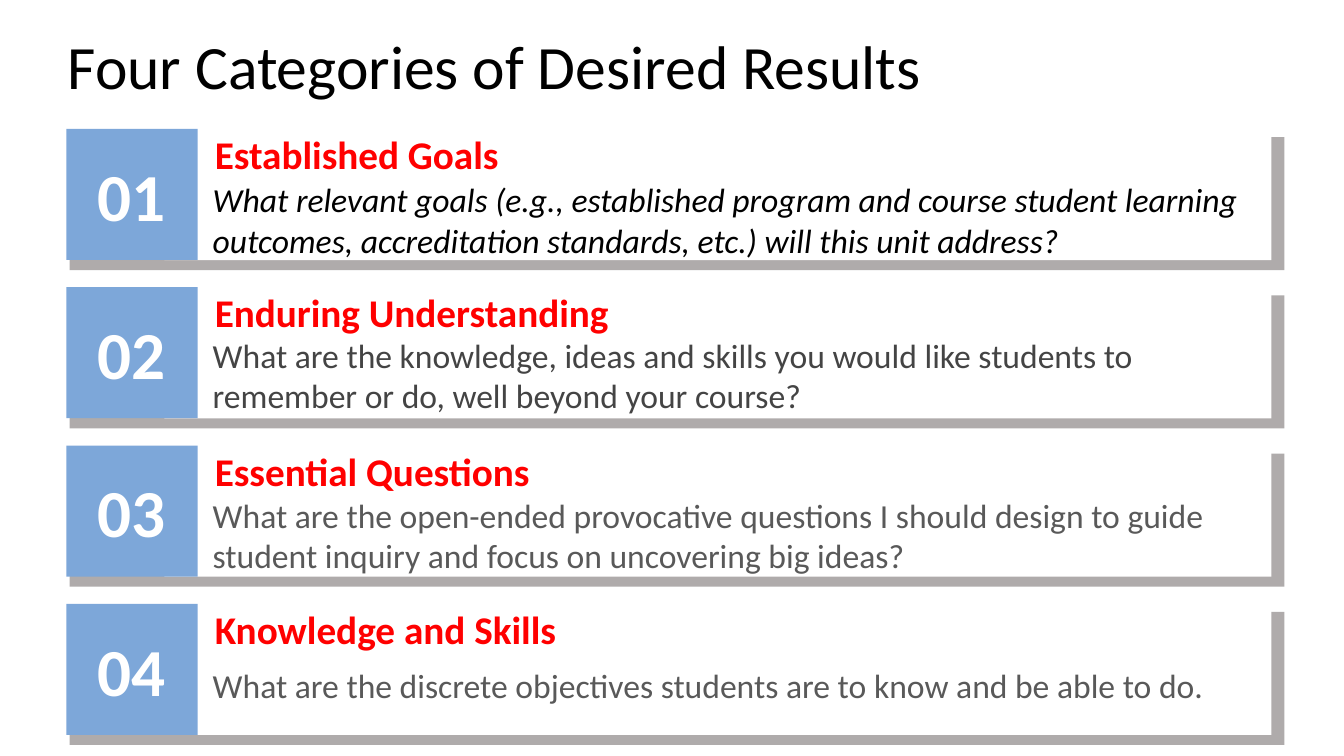
from pptx import Presentation
from pptx.dml.color import RGBColor
from pptx.enum.shapes import MSO_SHAPE
from pptx.enum.text import MSO_ANCHOR, PP_ALIGN
from pptx.util import Inches, Pt

RECTANGLE = MSO_SHAPE.RECTANGLE
TOP, MIDDLE, BOTTOM = MSO_ANCHOR.TOP, MSO_ANCHOR.MIDDLE, MSO_ANCHOR.BOTTOM
LEFT, CENTER = PP_ALIGN.LEFT, PP_ALIGN.CENTER

BLACK = RGBColor(0x00, 0x00, 0x00)
WHITE = RGBColor(0xFF, 0xFF, 0xFF)
RED = RGBColor(0xFF, 0x00, 0x00)
BLUE = RGBColor(0x7D, 0xA7, 0xD9)
SHADE = RGBColor(0xAF, 0xAB, 0xAB)
DARK_GRAY = RGBColor(0x44, 0x44, 0x44)
GRAY = RGBColor(0x59, 0x59, 0x59)

FONT = "Calibri"
CARD_LEFT, CARD_TOP, CARD_PITCH = 0.66, 1.28, 1.57
NUMBER_SIZE = 1.3

CATEGORIES = [
    ("Established Goals",
     "What relevant goals (e.g., established program and course student learning "
     "outcomes, accreditation standards, etc.) will this unit address?",
     0.45, BLACK, True),
    ("Enduring Understanding",
     "What are the knowledge, ideas and skills you would like students to "
     "remember or do, well beyond your course?",
     0.42, DARK_GRAY, False),
    ("Essential Questions",
     "What are the open-ended provocative questions I should design to guide "
     "student inquiry and focus on uncovering big ideas?",
     0.44, GRAY, False),
    ("Knowledge and Skills",
     "What are the discrete objectives students are to know and be able to do.",
     0.56, GRAY, False),
]


def write_text(shape, text, size, color, bold=False, italic=False,
               alignment=LEFT, anchor=TOP, side_margin=0.1):
    frame = shape.text_frame
    frame.word_wrap = True
    frame.vertical_anchor = anchor
    frame.margin_left = frame.margin_right = Inches(side_margin)
    frame.margin_top = frame.margin_bottom = Inches(0.05)
    paragraph = frame.paragraphs[0]
    paragraph.alignment = alignment
    run = paragraph.add_run()
    run.text = text
    run.font.name = FONT
    run.font.size = Pt(size)
    run.font.bold = bold
    run.font.italic = italic
    run.font.color.rgb = color
    return paragraph


def add_rectangle(slide, left, top, width, height, color):
    shape = slide.shapes.add_shape(
        RECTANGLE, Inches(left), Inches(top), Inches(width), Inches(height))
    shape.shadow.inherit = False
    shape.fill.solid()
    shape.fill.fore_color.rgb = color
    shape.line.fill.background()
    return shape


def add_text(slide, left, top, width, height, text, **text_format):
    box = slide.shapes.add_textbox(
        Inches(left), Inches(top), Inches(width), Inches(height))
    write_text(box, text, side_margin=0, **text_format)


def place_title(slide, left, top, width, height):
    title = slide.shapes.title
    title.left, title.top = Inches(left), Inches(top)
    title.width, title.height = Inches(width), Inches(height)
    paragraph = write_text(title, "Four Categories of Desired Results", 44, BLACK)
    paragraph.line_spacing = 0.9


def add_card(slide, left, top, number, category):
    heading, question, question_offset, color, italic = category
    add_rectangle(slide, left + 0.03, top + 0.08, 12.05, 1.32, SHADE)
    add_rectangle(slide, left + 0.97, top - 0.02, 10.98, 1.32, WHITE)
    square = add_rectangle(slide, left, top, NUMBER_SIZE, NUMBER_SIZE, BLUE)
    write_text(square, f"{number:02}", 48, WHITE, bold=True,
               alignment=CENTER, anchor=MIDDLE)
    add_text(slide, left + 1.47, top - 0.04, 5.22, 0.57, heading,
             size=28, color=RED, bold=True, anchor=BOTTOM)
    add_text(slide, left + 1.45, top + question_offset, 10.35, 0.91, question,
             size=24, color=color, italic=italic)


def main():
    presentation = Presentation()
    presentation.slide_width = Inches(13.33)
    presentation.slide_height = Inches(7.5)
    slide = presentation.slides.add_slide(
        presentation.slide_layouts.get_by_name("Title Only"))
    place_title(slide, 0.57, 0.31, 11.5, 1.45)
    for index, category in enumerate(CATEGORIES):
        add_card(slide, CARD_LEFT, CARD_TOP + index * CARD_PITCH, index + 1, category)
    presentation.save("out.pptx")


if __name__ == "__main__":
    main()
